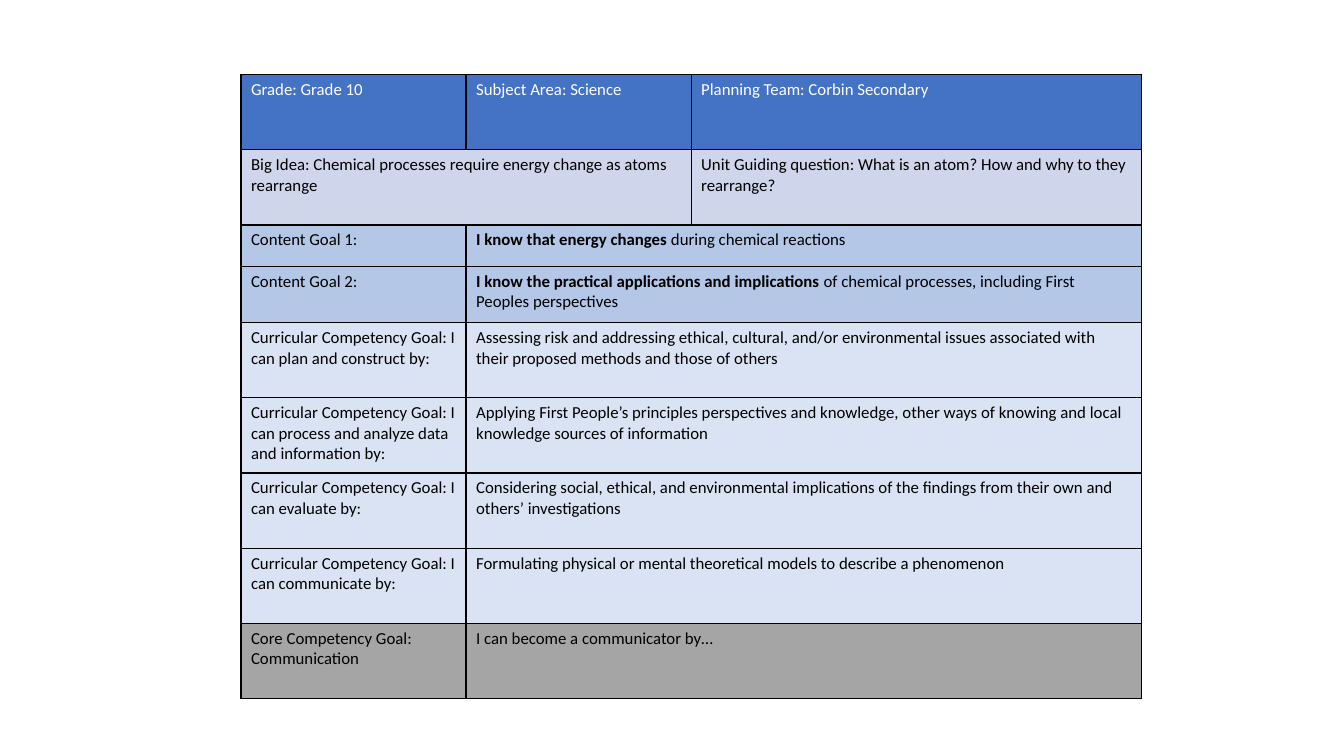
from lxml import etree
from pptx import Presentation
from pptx.dml.color import RGBColor
from pptx.oxml.ns import qn
from pptx.util import Inches, Pt

theme = {
    "font": "Calibri", "size": 12, "line": 1,
    "white": "FFFFFF", "black": "000000",
    "head": "4472C4", "idea": "CFD5EA", "goal": "B4C7E7",
    "skill": "DAE3F3", "core": "A5A5A5",
}

left, top, width, height = 2.39, 0.74, 8.93, 6.19
shares = [1 / 4, 1 / 4, 1 / 2]
short = {2: 0.41, 3: 0.56}

rows = [
    ("head", {0: "Grade: Grade 10", 1: "Subject Area: Science",
              2: "Planning Team: Corbin Secondary"}),
    ("idea", {0: "Big Idea: Chemical processes require energy change as atoms rearrange",
              2: "Unit Guiding question: What is an atom? How and why to they rearrange?"}),
    ("goal", {0: "Content Goal 1:",
              1: ("I know that energy changes ", "during chemical reactions")}),
    ("goal", {0: "Content Goal 2:",
              1: ("I know the practical applications and implications ",
                  "of chemical processes, including First Peoples perspectives")}),
    ("skill", {0: "Curricular Competency Goal: I can plan and construct by:",
               1: "Assessing risk and addressing ethical, cultural, and/or environmental "
                  "issues associated with their proposed methods and those of others"}),
    ("skill", {0: "Curricular Competency Goal: I can process and analyze data and information by:",
               1: "Applying First People’s principles perspectives and knowledge, other ways "
                  "of knowing and local knowledge sources of information"}),
    ("skill", {0: "Curricular Competency Goal: I can evaluate by:",
               1: "Considering social, ethical, and environmental implications of the findings "
                  "from their own and others’ investigations"}),
    ("skill", {0: "Curricular Competency Goal: I can communicate by:",
               1: "Formulating physical or mental theoretical models to describe a phenomenon"}),
    ("core", {0: "Core Competency Goal: Communication",
              1: "I can become a communicator by…"}),
]


def border(cell):
    props = cell._tc.get_or_add_tcPr()
    for spot, side in enumerate(("lnL", "lnR", "lnT", "lnB")):
        line = etree.Element(qn(f"a:{side}"), w=str(Pt(theme["line"])))
        fill = etree.SubElement(line, qn("a:solidFill"))
        etree.SubElement(fill, qn("a:srgbClr"), val=theme["black"])
        props.insert(spot, line)


deck = Presentation()
deck.slide_width, deck.slide_height = Inches(13.33), Inches(7.5)
slide = deck.slides.add_slide(deck.slide_layouts[6])
table = slide.shapes.add_table(
    len(rows), len(shares),
    Inches(left), Inches(top), Inches(width), Inches(height)).table

for col, share in zip(table.columns, shares):
    col.width = Inches(width * share)

tall = (height - sum(short.values())) / (len(rows) - len(short))
for r, (tone, texts) in enumerate(rows):
    table.rows[r].height = Inches(short.get(r, tall))
    for c in range(len(shares)):
        cell = table.cell(r, c)
        cell.fill.solid()
        cell.fill.fore_color.rgb = RGBColor.from_string(theme[tone])
        border(cell)
        if c not in texts:
            table.cell(r, c - 1).merge(cell)
            continue
        para = cell.text_frame.paragraphs[0]
        font = para.font
        font.name, font.size = theme["font"], Pt(theme["size"])
        ink = "white" if tone == "head" else "black"
        font.color.rgb = RGBColor.from_string(theme[ink])
        text = texts[c]
        parts = ("", text) if isinstance(text, str) else text
        for part, bold in zip(parts, (True, False)):
            if part:
                run = para.add_run()
                run.text, run.font.bold = part, bold

deck.save("out.pptx")
